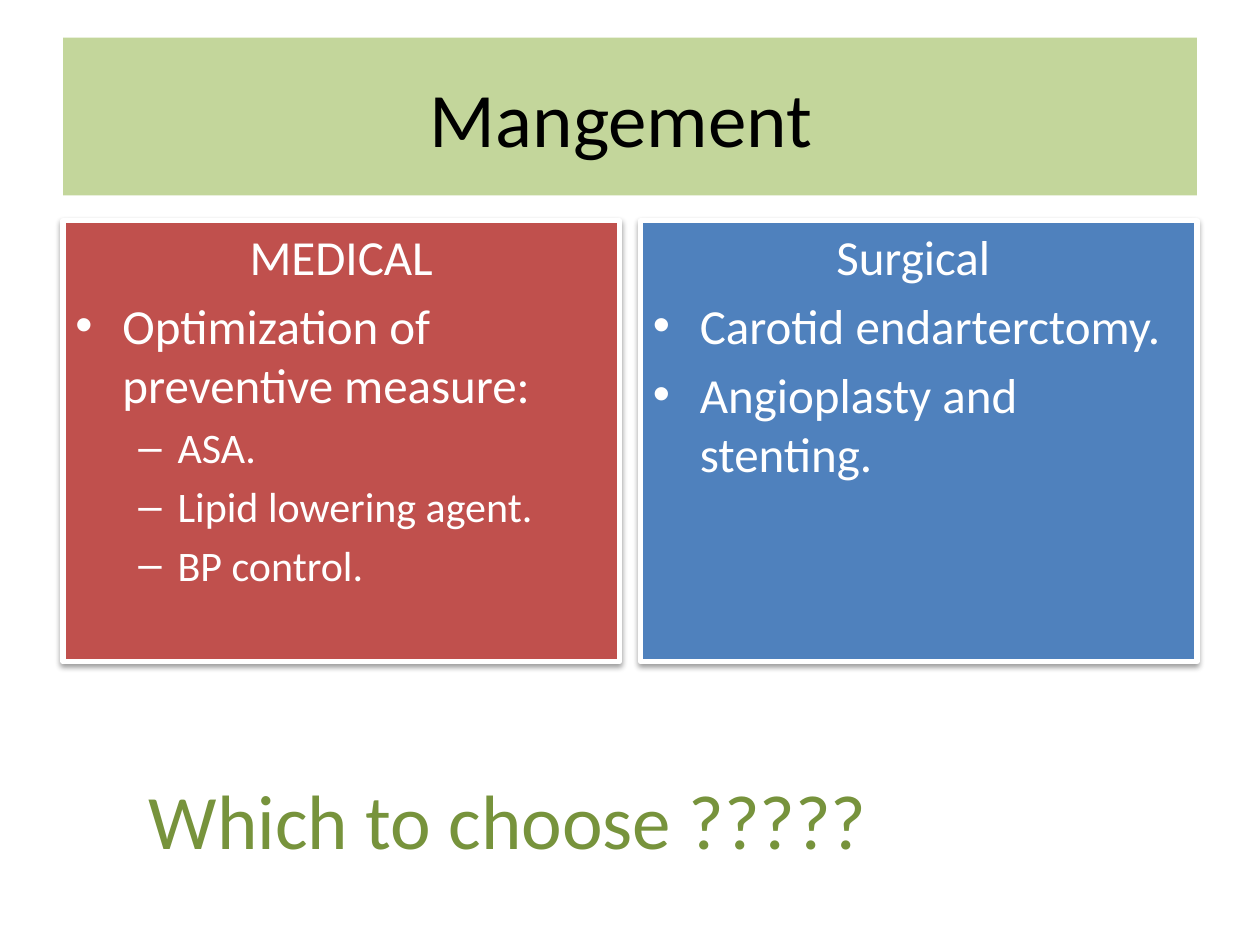
from lxml.etree import SubElement
from pptx import Presentation
from pptx.dml.color import RGBColor
from pptx.enum.shapes import MSO_SHAPE as Shape
from pptx.enum.text import MSO_ANCHOR as Anchor, PP_ALIGN as Align
from pptx.oxml.ns import qn
from pptx.util import Cm, Pt

BLACK = RGBColor(0x00, 0x00, 0x00)
WHITE = RGBColor(0xFF, 0xFF, 0xFF)
LIME = RGBColor(0xC3, 0xD6, 0x9B)
RED = RGBColor(0xC0, 0x50, 0x4D)
BLUE = RGBColor(0x4F, 0x81, 0xBD)
GREEN = RGBColor(0x77, 0x93, 0x3C)

# Kind of line: size, left margin, first-line indent, bullet
STYLES = {
    "head": (28, 0.95, -0.95, None),
    "item": (28, 0.95, -0.95, "•"),
    "sub": (24, 2.06, -0.79, "–"),
}
PANELS = [
    (RED, [
        ("head", "MEDICAL"),
        ("item", "Optimization of preventive measure:"),
        ("sub", "ASA."),
        ("sub", "Lipid lowering agent."),
        ("sub", "BP control."),
    ]),
    (BLUE, [
        ("head", "Surgical "),
        ("item", "Carotid endarterctomy."),
        ("item", "Angioplasty and stenting."),
    ]),
]
LEFT, WIDTH, GAP = 1.27, 22.86, 0.42


def style(para, size, color):
    for run in para.runs:
        run.font.name = "Calibri"
        run.font.size = Pt(size)
        run.font.color.rgb = color


def drop_shadow(box):
    box.shadow.inherit = False
    effects = box._element.spPr.find(qn("a:effectLst"))
    outer = SubElement(effects, qn("a:outerShdw"), blurRad=str(Pt(3.1)),
                       dist=str(Pt(1.6)), dir="5400000", rotWithShape="0")
    tint = SubElement(outer, qn("a:srgbClr"), val=str(BLACK))
    SubElement(tint, qn("a:alpha"), val="38000")


prs = Presentation()
prs.slide_width, prs.slide_height = Cm(25.4), Cm(19.05)
slide = prs.slides.add_slide(prs.slide_layouts[5])

title = slide.shapes.title
title.left, title.top = Cm(LEFT), Cm(0.76)
title.width, title.height = Cm(WIDTH), Cm(3.18)
title.fill.solid()
title.fill.fore_color.rgb = LIME
title.text_frame.text = "Mangement "
title.text_frame.vertical_anchor = Anchor.MIDDLE
title.text_frame.paragraphs[0].alignment = Align.CENTER
style(title.text_frame.paragraphs[0], 44, BLACK)

wide = (WIDTH - GAP) / 2
for col, (color, lines) in enumerate(PANELS):
    box = slide.shapes.add_shape(
        Shape.RECTANGLE, Cm(LEFT + col * (wide + GAP)), Cm(4.45),
        Cm(wide), Cm(8.89))
    box.fill.solid()
    box.fill.fore_color.rgb = color
    box.line.color.rgb = WHITE
    box.line.width = Pt(3)
    drop_shadow(box)
    frame = box.text_frame
    frame.word_wrap = True
    frame.vertical_anchor = Anchor.TOP
    frame.text = "\n".join(text for _, text in lines)
    for para, (kind, _) in zip(frame.paragraphs, lines):
        size, margin, indent, mark = STYLES[kind]
        para.alignment = Align.LEFT if mark else Align.CENTER
        para.level = 1 if kind == "sub" else 0
        para.space_before = Pt(size * 0.2)
        props = para._p.get_or_add_pPr()
        props.set("marL", str(Cm(margin)))
        props.set("indent", str(Cm(indent)))
        if mark:
            SubElement(props, qn("a:buFont"), typeface="Arial")
            SubElement(props, qn("a:buChar"), char=mark)
        style(para, size, WHITE)

ask = slide.shapes.add_textbox(Cm(2.75), Cm(15.44), Cm(24.33), Cm(2.9))
ask.text_frame.word_wrap = True
ask.text_frame.text = "Which to choose ?????"
style(ask.text_frame.paragraphs[0], 44, GREEN)

prs.save("out.pptx")
